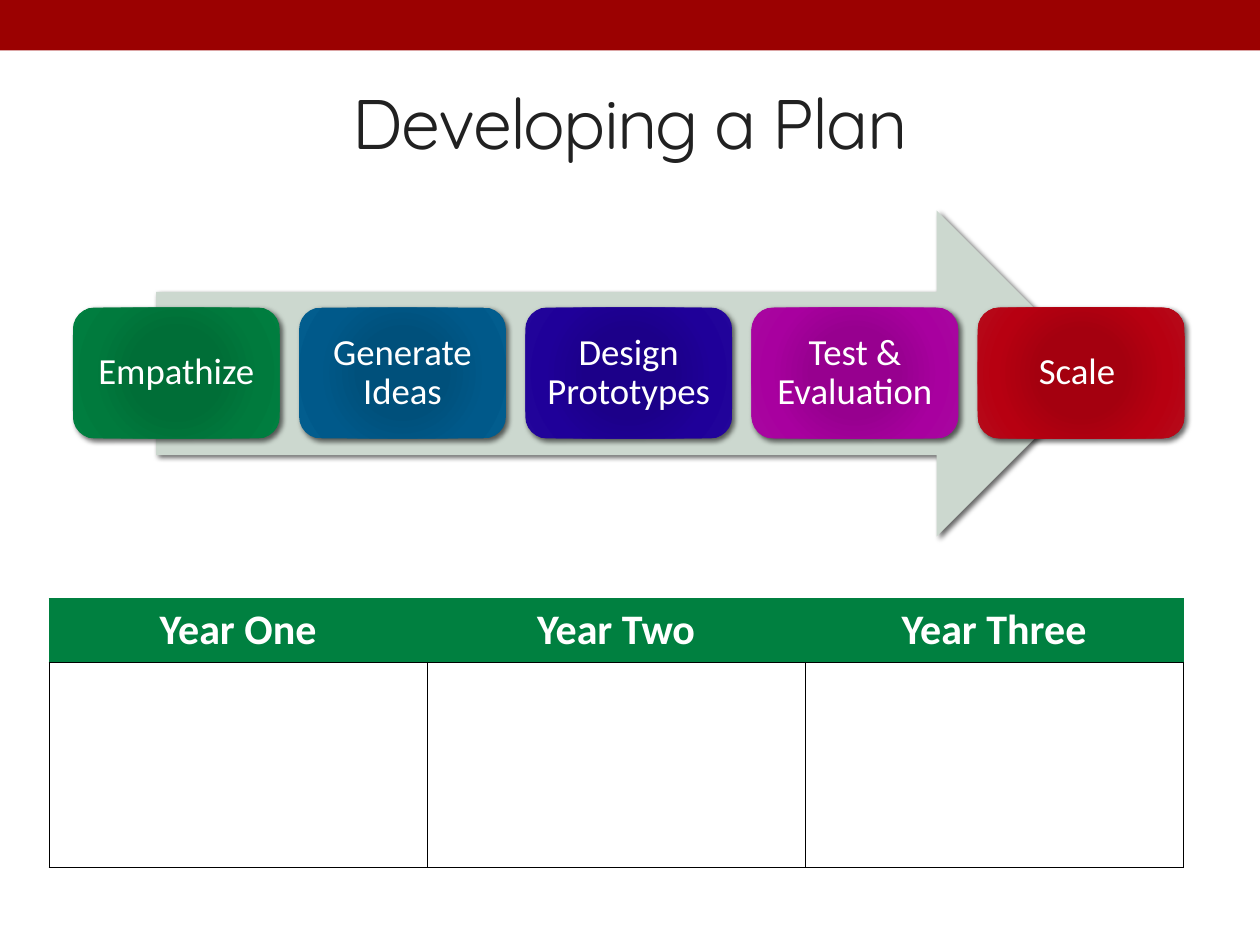
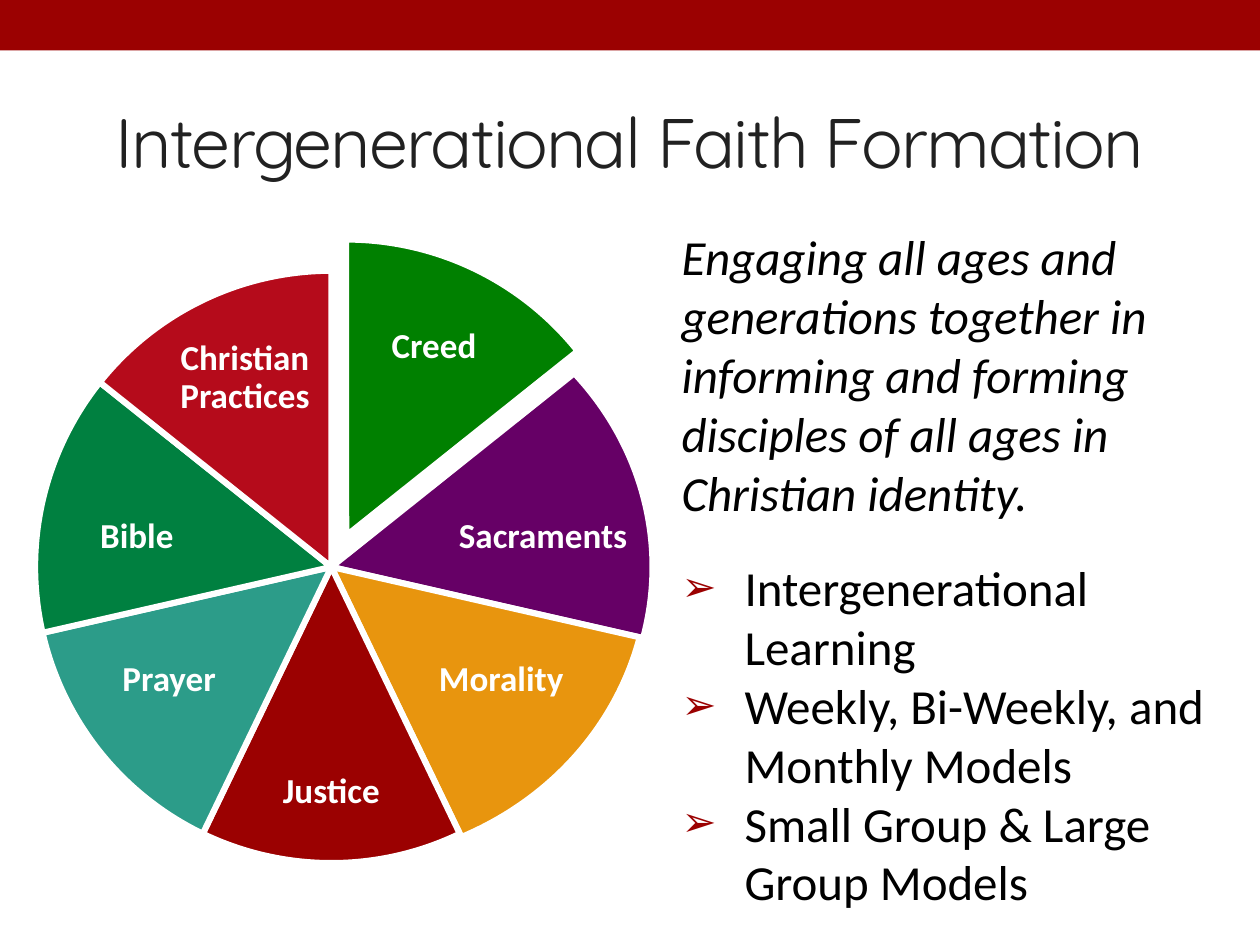
from lxml.etree import SubElement
from pptx import Presentation
from pptx.dml.color import RGBColor
from pptx.enum.shapes import MSO_SHAPE as SHAPE
from pptx.enum.text import MSO_ANCHOR as ANCHOR, PP_ALIGN as ALIGN
from pptx.oxml import parse_xml
from pptx.oxml.ns import nsdecls, qn
from pptx.util import Cm, Pt

COLORS = {
    "band": "9B0101", "title": "212121", "white": "FFFFFF", "black": "000000",
    "green": "008040", "arrow": "CCD8CF", "creed": "008000", "purple": "660066",
    "orange": "E8950E", "teal": "2C9C89", "red": "B50B1B",
}
BODY_FONT = "Calibri"
TITLE_FONT = "Quicksand"

STEPS = [
    ("Empathize", ("006E37", "007A3D", "008040")),
    ("Generate Ideas", ("00507B", "00598A", "025D8E")),
    ("Design Prototypes", ("1C0089", "1F0099", "23059B")),
    ("Test & Evaluation", ("97008F", "A8009F", "A808A0")),
    ("Scale ", ("A4000F", "B70011", "B50B1B")),
]
YEARS = ["Year One", "Year Two", "Year Three"]

PIE_X, PIE_Y, PIE_SIZE = 6.68, 11.43, 11.94
SLICES = [
    ("Creed", "creed", PIE_SIZE, (7.11, 5.97, 3.28, 2.06)),
    ("Sacraments", "purple", 12.95, (9.07, 9.73, 3.76, 2.21)),
    ("Morality ", "orange", 12.8, (8.51, 12.57, 3.35, 2.29)),
    ("Justice", "band", PIE_SIZE, (5.08, 14.83, 3.2, 2.29)),
    ("Prayer", "teal", PIE_SIZE, (1.85, 12.57, 3.12, 2.29)),
    ("Bible", "green", PIE_SIZE, (1.02, 9.73, 3.48, 2.21)),
    ("Christian Practices", "red", PIE_SIZE, (3.3, 6.6, 3.28, 2.06)),
]
INTRO = ("Engaging all ages and generations together in informing and "
         "forming disciples of all ages in Christian identity.")
MODELS = [
    "Intergenerational Learning",
    "Weekly, Bi-Weekly, and Monthly Models",
    "Small Group & Large Group Models",
]


def rgb(name):
    return RGBColor.from_string(COLORS[name])


def add_run(p, text, size, color="white", font=BODY_FONT, bold=False, italic=False):
    r = p.add_run()
    r.text = text
    r.font.size = Pt(size)
    r.font.name = font
    r.font.bold = bold
    r.font.italic = italic
    r.font.color.rgb = rgb(color)
    return r


def set_frame(tf, margin=None, anchor=ANCHOR.MIDDLE):
    tf.word_wrap = True
    tf.vertical_anchor = anchor
    if margin is not None:
        tf.margin_left = tf.margin_right = Cm(margin)
        tf.margin_top = tf.margin_bottom = Cm(margin)


def add_label(tf, text, size, margin, bold=False):
    set_frame(tf, margin)
    p = tf.paragraphs[0]
    p.alignment = ALIGN.CENTER
    p.line_spacing = 0.9
    add_run(p, text, size, bold=bold)


def add_shape(slide, kind, box, fill=None):
    s = slide.shapes.add_shape(kind, *map(Cm, box))
    s.shadow.inherit = False
    s.line.fill.background()
    if fill:
        s.fill.solid()
        s.fill.fore_color.rgb = rgb(fill)
    return s


def add_shadow(s):
    effects = s._element.spPr.find(qn("a:effectLst"))
    effects.append(parse_xml(
        f'<a:outerShdw {nsdecls("a")} blurRad="{Pt(3)}" dist="{Pt(2)}" '
        f'dir="2700000" rotWithShape="0"><a:srgbClr val="{COLORS["black"]}">'
        '<a:alpha val="60000"/></a:srgbClr></a:outerShdw>'))


def add_radial_fill(s, shades):
    dark, middle, light = shades
    stops = "".join(
        f'<a:gs pos="{pos * 1000}"><a:srgbClr val="{shade}"/></a:gs>'
        for pos, shade in [(0, dark), (34, dark), (70, middle), (100, light)])
    geometry = s._element.spPr.find(qn("a:prstGeom"))
    geometry.addnext(parse_xml(
        f'<a:gradFill {nsdecls("a")} rotWithShape="1"><a:gsLst>{stops}</a:gsLst>'
        '<a:path path="circle"><a:fillToRect l="100000" t="100000" '
        'r="100000" b="100000"/></a:path></a:gradFill>'))


def add_slide(prs, title, title_top):
    slide = prs.slides.add_slide(prs.slide_layouts[6])
    add_shape(slide, SHAPE.RECTANGLE, (0, 0, 25.4, 1.02), "band")
    s = slide.shapes.add_textbox(Cm(1.27), Cm(title_top), Cm(22.86), Cm(2.74))
    set_frame(s.text_frame)
    p = s.text_frame.paragraphs[0]
    p.alignment = ALIGN.CENTER
    r = add_run(p, title, 40, "title", TITLE_FONT)
    r._r.get_or_add_rPr().set("spc", "-100")
    return slide


def add_process(slide):
    arrow = add_shape(slide, SHAPE.RIGHT_ARROW, (3.15, 4.24, 19.02, 6.58), "arrow")
    add_shadow(arrow)
    for i, (text, shades) in enumerate(STEPS):
        card = add_shape(slide, SHAPE.ROUNDED_RECTANGLE,
                         (1.47 + i * 4.56, 6.2, 4.17, 2.64))
        add_radial_fill(card, shades)
        add_shadow(card)
        add_label(card.text_frame, text, 21, 0.15)


def set_borders(cell, edges):
    tcPr = cell._tc.get_or_add_tcPr()
    for i, (edge, (color, width)) in enumerate(edges.items()):
        tcPr.insert(i, parse_xml(
            f'<a:ln{edge} {nsdecls("a")} w="{Pt(width)}"><a:solidFill>'
            f'<a:srgbClr val="{COLORS[color]}"/></a:solidFill></a:ln{edge}>'))


def add_year_table(slide):
    table = slide.shapes.add_table(
        2, len(YEARS), Cm(0.99), Cm(12.07), Cm(22.86), Cm(5.42)).table
    table.first_row = table.horz_banding = False
    table.rows[0].height, table.rows[1].height = Cm(1.28), Cm(4.14)
    green, black = ("green", 0.75), ("black", 0.75)
    for col, year in enumerate(YEARS):
        head, body = table.cell(0, col), table.cell(1, col)
        head.fill.solid()
        head.fill.fore_color.rgb = rgb("green")
        p = head.text_frame.paragraphs[0]
        p.alignment = ALIGN.CENTER
        add_run(p, year, 24, bold=True)
        set_borders(head, {"L": green, "R": green, "T": green, "B": black})
        body.fill.background()
        set_borders(body, dict.fromkeys("LRTB", black))


def add_pie(slide):
    step = 360 / len(SLICES)
    for i, (text, color, width, label_box) in enumerate(SLICES):
        dx, dy = (0.3, -0.63) if i == 0 else (0, 0)
        s = add_shape(slide, SHAPE.PIE,
                      (PIE_X + dx - width / 2, PIE_Y + dy - PIE_SIZE / 2,
                       width, PIE_SIZE), color)
        s.line.color.rgb = rgb("white")
        s.line.width = Pt(3.5)
        start = 270 + i * step
        s.adjustments[0] = start % 360 * 0.6
        s.adjustments[1] = (start + step) % 360 * 0.6
        label = slide.shapes.add_textbox(*map(Cm, label_box))
        add_label(label.text_frame, text, 20, 0.08, bold=True)


def add_bullet(p):
    pPr = p._p.get_or_add_pPr()
    pPr.set("marL", str(Cm(1.27)))
    pPr.set("indent", str(-Cm(1.27)))
    color = SubElement(pPr, qn("a:buClr"))
    SubElement(color, qn("a:srgbClr"), val=COLORS["band"])
    SubElement(pPr, qn("a:buSzPct"), val="85000")
    SubElement(pPr, qn("a:buFont"), typeface=BODY_FONT)
    SubElement(pPr, qn("a:buChar"), char="➢")


def add_models(slide):
    s = slide.shapes.add_textbox(Cm(13.49), Cm(4.45), Cm(11.15), Cm(14.07))
    tf = s.text_frame
    set_frame(tf, anchor=ANCHOR.TOP)
    add_run(tf.paragraphs[0], INTRO, 28, "black", italic=True)
    for i, model in enumerate(MODELS):
        p = tf.add_paragraph()
        add_bullet(p)
        p.space_before = Pt(21 if i == 0 else 0)
        add_run(p, model, 28, "black")


def main():
    prs = Presentation()
    prs.slide_width, prs.slide_height = Cm(25.4), Cm(19.05)

    plan = add_slide(prs, "Developing a Plan", 1.07)
    add_year_table(plan)
    add_process(plan)

    formation = add_slide(prs, "Intergenerational Faith Formation", 1.47)
    add_pie(formation)
    add_models(formation)

    prs.save("out.pptx")


if __name__ == "__main__":
    main()
